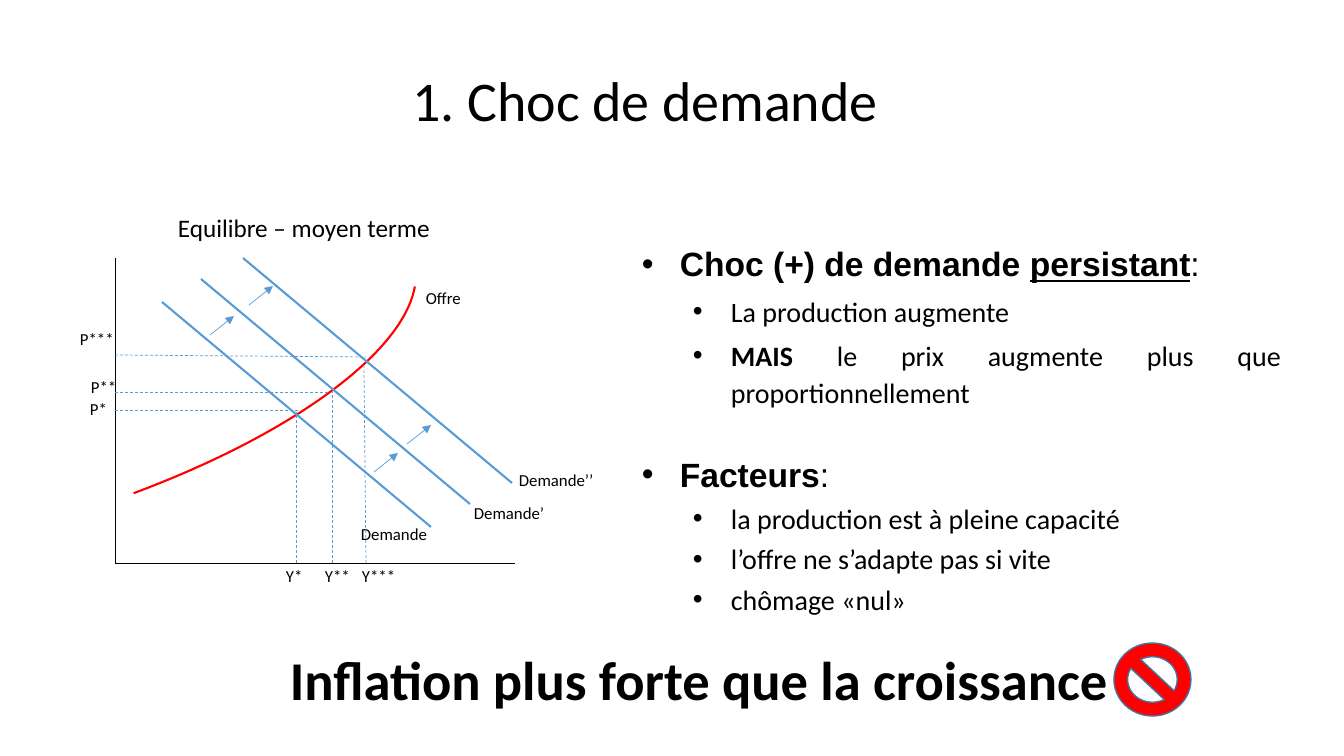
from lxml.etree import SubElement
from pptx import Presentation
from pptx.dml.color import RGBColor
from pptx.enum.dml import MSO_LINE
from pptx.enum.shapes import MSO_CONNECTOR, MSO_SHAPE
from pptx.enum.text import MSO_ANCHOR, PP_ALIGN
from pptx.oxml.ns import qn
from pptx.util import Pt

WIDTH, HEIGHT = 1344, 756
SCALE = 12192000 / WIDTH
COLORS = {"text": "000000", "demand": "5B9BD5", "supply": "FF0000",
          "sign": "FF0000", "sign_edge": "43739E"}


def px(n):
    return round(n * SCALE)


def color(name):
    return RGBColor.from_string(COLORS[name])


class SlideBuilder:
    def __init__(self, prs):
        self.s = prs.slides.add_slide(prs.slide_layouts[6])
        self.font = "Calibri"

    def run(self, p, text, size, bold=False, underline=False, font=None):
        r = p.add_run()
        r.text = text
        r.font.size = Pt(size)
        r.font.name = font or self.font
        r.font.bold = bold
        r.font.underline = underline
        r.font.color.rgb = color("text")

    def frame(self, x, y, w, h, anchor=MSO_ANCHOR.TOP):
        tf = self.s.shapes.add_textbox(px(x), px(y), px(w), px(h)).text_frame
        tf.word_wrap = True
        tf.vertical_anchor = anchor
        return tf

    def label(self, text, x, y, w=135, h=30, size=12):
        self.run(self.frame(x, y, w, h).paragraphs[0], text, size)

    def heading(self, text, x, y, size, bold=False):
        p = self.frame(x, y, 1196, 114, MSO_ANCHOR.BOTTOM).paragraphs[0]
        p.alignment = PP_ALIGN.CENTER
        p.line_spacing = 0.9
        self.run(p, text, size, bold)

    def bullet(self, p, level, before, spacing, runs):
        p.level = level
        p.space_before = Pt(before)
        p.line_spacing = spacing
        p.alignment = PP_ALIGN.JUSTIFY if level else PP_ALIGN.LEFT
        pPr = p._p.get_or_add_pPr()
        pPr.set("marL", str(px(89 if level else 38)))
        pPr.set("indent", str(px(-38)))
        SubElement(pPr, qn("a:buFont")).set("typeface", "Arial")
        SubElement(pPr, qn("a:buChar")).set("char", "•")
        size, font = (20, "Calibri") if level else (24, "Arial")
        for text, bold, underline in runs:
            self.run(p, text, size, bold, underline, font)

    def line(self, x1, y1, x2, y2, stroke="demand", width=0.5, dashed=False, arrow=False):
        c = self.s.shapes.add_connector(MSO_CONNECTOR.STRAIGHT, px(x1), px(y1), px(x2), px(y2))
        c.line.color.rgb = color(stroke)
        c.line.width = Pt(width)
        if dashed:
            c.line.dash_style = MSO_LINE.DASH
        if arrow:
            SubElement(c.line._get_or_add_ln(), qn("a:tailEnd")).set("type", "triangle")
        SubElement(c._element.spPr, qn("a:effectLst"))

    def shape(self, kind, x, y, w, h, stroke, width, fill=None):
        sp = self.s.shapes.add_shape(kind, px(x), px(y), px(w), px(h))
        sp.shadow.inherit = False
        if fill:
            sp.fill.solid()
            sp.fill.fore_color.rgb = color(fill)
        else:
            sp.fill.background()
        sp.line.color.rgb = color(stroke)
        sp.line.width = Pt(width)
        return sp


def draw_chart(b):
    left, bottom = 115, 563
    b.label("Equilibre – moyen terme", 168, 207, 316, 40, 18)
    b.line(left, 258, left, bottom, "text")
    b.line(519 - 4, bottom, left, bottom, "text")

    supply = b.shape(MSO_SHAPE.ARC, -151, -52, 303, 859, "supply", 1.5)
    supply.rotation = 74.2
    supply.adjustments[0] = 164.05
    supply.adjustments[1] = 196.09
    b.label("Offre", 416, 283)

    for x, y in [(162, 302), (201, 279), (243, 258)]:
        b.line(x, y, x + 269, y + 225, width=1.5)
    for x, y in [(374, 472), (210, 335), (407, 444), (249, 305)]:
        b.line(x, y, x + 24, y - 19, arrow=True)
    for text, x, y in [("Demande", 351, 519), ("Demande’", 464, 498), ("Demande’’", 509, 465)]:
        b.label(text, x, y)

    for y1, x2, y2 in [(410, 298, 410), (392, 328, 392), (355, 366, 357)]:
        b.line(left, y1, x2, y2, dashed=True)
    for x1, x2, y2 in [(296, 296, 412), (332, 332, 391), (366, 364, 366)]:
        b.line(x1, bottom, x2, y2, dashed=True)
    for text, x, y in [("P*", 80, 394), ("P**", 81, 372), ("P***", 70, 324),
                       ("Y*", 276, 561), ("Y**", 315, 561), ("Y***", 352, 561)]:
        b.label(text, x, y, 66)


def draw_bullets(b):
    items = [
        (0, 0, 0.9, [("Choc (+) de demande ", True, False), ("persistant", True, True),
                     (":", False, False)]),
        (1, 5, 1.1, [("La production augmente", False, False)]),
        (1, 5, 1.1, [("MAIS", True, False),
                     (" le prix augmente plus que proportionnellement", False, False)]),
        (0, 35, 0.9, [("Facteurs", True, False), (":", False, False)]),
        (1, 5, 1.0, [("la production est à pleine capacité", False, False)]),
        (1, 5, 1.0, [("l’offre ne s’adapte pas si vite", False, False)]),
        (1, 5, 1.0, [("chômage «nul»", False, False)]),
    ]
    tf = b.frame(632, 243, 659, 379)
    for i, item in enumerate(items):
        b.bullet(tf.add_paragraph() if i else tf.paragraphs[0], *item)


def main():
    prs = Presentation()
    prs.slide_width, prs.slide_height = px(WIDTH), px(HEIGHT)
    b = SlideBuilder(prs)
    b.heading("1. Choc de demande", 47, 25, 40)
    draw_bullets(b)
    draw_chart(b)
    b.heading("Inflation plus forte que la croissance", 101, 603, 39, bold=True)
    b.shape(MSO_SHAPE.NO_SYMBOL, 1114, 643, 77, 73, "sign_edge", 1, "sign")
    prs.save("out.pptx")


if __name__ == "__main__":
    main()
